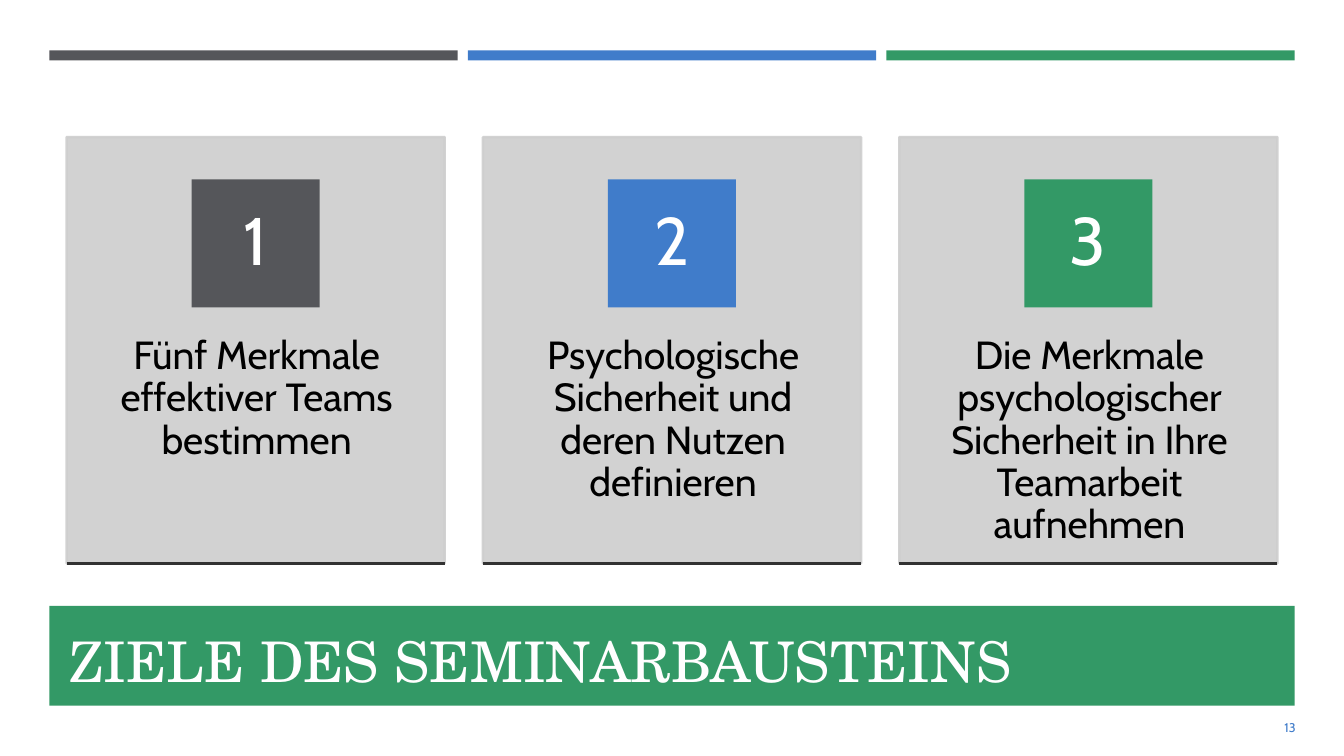
"""Build the seminar goals slide with three numbered cards."""
from dataclasses import dataclass

from lxml import etree
from pptx import Presentation
from pptx.dml.color import RGBColor
from pptx.enum.shapes import MSO_CONNECTOR, MSO_SHAPE
from pptx.enum.text import MSO_ANCHOR, PP_ALIGN
from pptx.oxml.ns import qn
from pptx.util import Inches, Pt

RECTANGLE = MSO_SHAPE.RECTANGLE
STRAIGHT = MSO_CONNECTOR.STRAIGHT
TOP, MIDDLE = MSO_ANCHOR.TOP, MSO_ANCHOR.MIDDLE
LEFT, CENTER, RIGHT = PP_ALIGN.LEFT, PP_ALIGN.CENTER, PP_ALIGN.RIGHT

COLORS = {
    "slate": "55565A",
    "blue": "407CCA",
    "green": "339966",
    "card": "CECECE",
    "rule": "323232",
    "title": "FFFEFF",
    "white": "FFFFFF",
    "black": "000000",
}
BODY_FONT = "Cabin"
TITLE_FONT = "TeX Gyre Schola"
MARGIN = 0.49
BAR_WIDTH, BAR_PITCH = 4.05, 4.15
CARD_LEFT, CARD_TOP, CARD_PITCH = 0.66, 1.36, 4.13
CARD_WIDTH, CARD_HEIGHT = 3.75, 4.23
BADGE_SIZE = 1.27


@dataclass(frozen=True)
class Goal:
    """A seminar goal and its accent colour."""
    text: str
    color: str


@dataclass(frozen=True)
class Style:
    """Look and placement of a text inside its box."""
    size: float
    color: str
    font: str = BODY_FONT
    align: PP_ALIGN = CENTER
    anchor: MSO_ANCHOR = MIDDLE
    insets: tuple[float, float, float, float] = (0.1, 0.05, 0.1, 0.05)
    spacing: float = 1.0


GOALS = [
    Goal("Fünf Merkmale effektiver Teams bestimmen", "slate"),
    Goal("Psychologische Sicherheit und deren Nutzen definieren", "blue"),
    Goal("Die Merkmale psychologischer Sicherheit in Ihre Teamarbeit aufnehmen", "green"),
]
TITLE = Style(40, "title", TITLE_FONT, LEFT)
PAGE_NUMBER = Style(9, "blue", align=RIGHT)
NUMBER = Style(48, "white", insets=(0.1, 0.01, 0.1, 0.01), spacing=0.9)
GOAL_TEXT = Style(28, "black", anchor=TOP, insets=(0.31, 0.36, 0.29, 0.36), spacing=0.9)


def rgb(name: str) -> RGBColor:
    """Look up a named colour."""
    return RGBColor.from_string(COLORS[name])


def add_block(page, left: float, top: float, width: float, height: float, color: str):
    """Add a plain filled rectangle."""
    block = page.shapes.add_shape(
        RECTANGLE, Inches(left), Inches(top), Inches(width), Inches(height))
    block.shadow.inherit = False
    block.fill.solid()
    block.fill.fore_color.rgb = rgb(color)
    block.line.fill.background()
    return block


def write(box, text: str, style: Style) -> None:
    """Put styled text into a shape."""
    frame = box.text_frame
    frame.text = text
    frame.word_wrap = True
    frame.vertical_anchor = style.anchor
    (frame.margin_left, frame.margin_top,
     frame.margin_right, frame.margin_bottom) = map(Inches, style.insets)
    para = frame.paragraphs[0]
    para.alignment = style.align
    para.line_spacing = style.spacing
    font = para.runs[0].font
    font.name = style.font
    font.size = Pt(style.size)
    font.color.rgb = rgb(style.color)


def add_text(page, left: float, top: float, width: float, height: float,
             text: str, style: Style) -> None:
    """Add a text box with styled text."""
    box = page.shapes.add_textbox(Inches(left), Inches(top), Inches(width), Inches(height))
    write(box, text, style)


def add_rule(page, left: float, top: float, width: float) -> None:
    """Add the dark line under a card."""
    rule = page.shapes.add_connector(
        STRAIGHT, Inches(left), Inches(top), Inches(left + width), Inches(top))
    rule.line.color.rgb = rgb("rule")
    rule.line.width = Pt(1.75)
    etree.SubElement(rule.element.spPr, qn("a:effectLst"))


def add_card(page, index: int, goal: Goal) -> None:
    """Add a card with its number, text and bottom line."""
    left = CARD_LEFT + index * CARD_PITCH
    card = add_block(page, left, CARD_TOP, CARD_WIDTH, CARD_HEIGHT, "card")
    card.line.color.rgb = rgb("card")
    card.line.width = Pt(1.75)
    for color in card.element.spPr.iter(qn("a:srgbClr")):
        etree.SubElement(color, qn("a:alpha"), val="90000")
    add_text(page, left, 2.97, CARD_WIDTH, 2.54, goal.text, GOAL_TEXT)
    badge = add_block(page, left + (CARD_WIDTH - BADGE_SIZE) / 2, 1.78,
                      BADGE_SIZE, BADGE_SIZE, goal.color)
    write(badge, str(index + 1), NUMBER)
    add_rule(page, left, CARD_TOP + CARD_HEIGHT, CARD_WIDTH)


def main() -> None:
    """Build and save the deck."""
    deck = Presentation()
    deck.slide_width, deck.slide_height = Inches(13.33), Inches(7.5)
    page = deck.slides.add_slide(deck.slide_layouts[6])
    for index, goal in enumerate(GOALS):
        add_block(page, MARGIN + index * BAR_PITCH, 0.5, BAR_WIDTH, 0.1, goal.color)
    add_block(page, MARGIN, 6.01, 12.35, 0.99, "green")
    add_text(page, 0.59, 6.11, 12.06, 0.87, "ZIELE DES SEMINARBAUSTEINS", TITLE)
    add_text(page, 11.8, 7.02, 1.15, 0.4, "13", PAGE_NUMBER)
    for index, goal in enumerate(GOALS):
        add_card(page, index, goal)
    deck.save("out.pptx")


if __name__ == "__main__":
    main()
